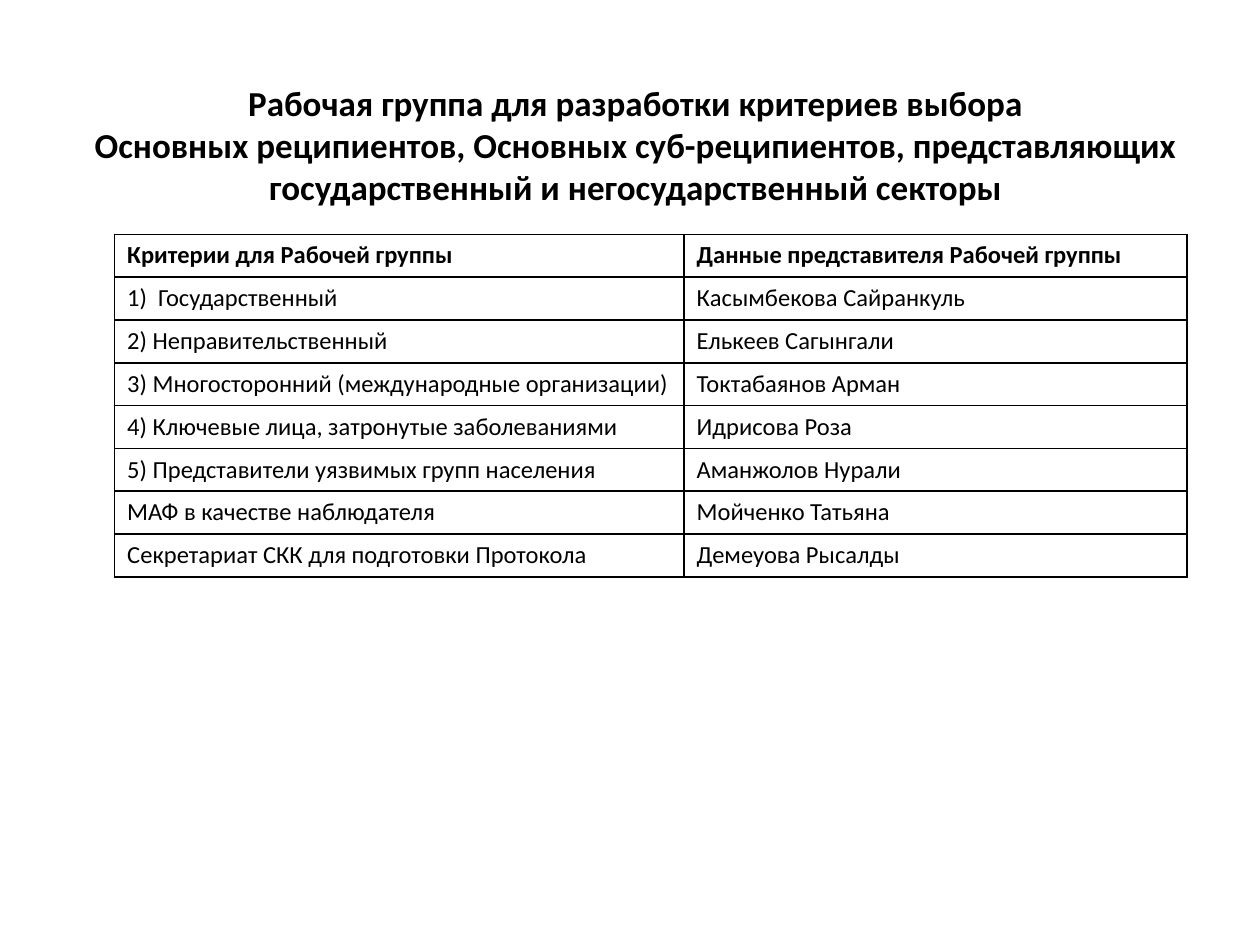
from typing import NamedTuple

import pptx
import pptx.dml.color
import pptx.enum.text
import pptx.oxml
import pptx.oxml.ns
import pptx.util
from pptx.util import Inches

FONT = "Calibri"
BLACK = "000000"
WHITE = "FFFFFF"
TITLE = (
    "Рабочая группа для разработки критериев выбора\v"
    "Основных реципиентов, Основных суб-реципиентов, представляющих "
    "государственный и негосударственный секторы"
)


class Member(NamedTuple):
    criterion: str
    name: str


HEADER = Member("Критерии для Рабочей группы", "Данные представителя Рабочей группы")
MEMBERS = [
    Member("1)  Государственный", "Касымбекова Сайранкуль"),
    Member("2) Неправительственный", "Елькеев Сагынгали"),
    Member("3) Многосторонний (международные организации)", "Токтабаянов Арман"),
    Member("4) Ключевые лица, затронутые заболеваниями", "Идрисова Роза"),
    Member("5) Представители уязвимых групп населения", "Аманжолов Нурали"),
    Member("МАФ в качестве наблюдателя", "Мойченко Татьяна"),
    Member("Секретариат СКК для подготовки Протокола", "Демеуова Рысалды"),
]
COLUMN_WIDTHS = (4.52, 3.99)
ROW_HEIGHT = 0.34


def color(value: str) -> pptx.dml.color.RGBColor:
    return pptx.dml.color.RGBColor.from_string(value)


def format_runs(text_frame, size: float, bold: bool) -> None:
    for paragraph in text_frame.paragraphs:
        for run in paragraph.runs:
            run.font.name = FONT
            run.font.size = pptx.util.Pt(size)
            run.font.bold = bold
            run.font.color.rgb = color(BLACK)


def add_borders(cell, width: float = 1) -> None:
    """Draw all four cell borders; their XML must come before the fill."""
    properties = cell._tc.get_or_add_tcPr()
    for index, side in enumerate(("lnL", "lnR", "lnT", "lnB")):
        border = pptx.oxml.parse_xml(
            f'<a:{side} {pptx.oxml.ns.nsdecls("a")} w="{pptx.util.Pt(width)}">'
            f'<a:solidFill><a:srgbClr val="{BLACK}"/></a:solidFill></a:{side}>'
        )
        properties.insert(index, border)


def format_title(title) -> None:
    title.left, title.top = Inches(0.28), Inches(0.6)
    title.width, title.height = Inches(9.53), Inches(1.1)
    text_frame = title.text_frame
    text_frame.text = TITLE
    text_frame.word_wrap = True
    text_frame.auto_size = pptx.enum.text.MSO_AUTO_SIZE.NONE
    text_frame.vertical_anchor = pptx.enum.text.MSO_ANCHOR.MIDDLE
    text_frame.paragraphs[0].alignment = pptx.enum.text.PP_ALIGN.CENTER
    format_runs(text_frame, 20, True)


def add_member_table(slide, rows: list[Member]) -> None:
    table = slide.shapes.add_table(
        len(rows), len(COLUMN_WIDTHS), Inches(0.91), Inches(1.86),
        Inches(sum(COLUMN_WIDTHS)), Inches(ROW_HEIGHT * len(rows)),
    ).table
    table.horz_banding = False
    for column, width in zip(table.columns, COLUMN_WIDTHS):
        column.width = Inches(width)
    for row_index, member in enumerate(rows):
        table.rows[row_index].height = Inches(ROW_HEIGHT)
        for column_index, text in enumerate(member):
            cell = table.cell(row_index, column_index)
            cell.text_frame.text = text
            format_runs(cell.text_frame, 14, row_index == 0)
            cell.fill.solid()
            cell.fill.fore_color.rgb = color(WHITE)
            add_borders(cell)


def main() -> None:
    presentation = pptx.Presentation()
    presentation.slide_width = Inches(10)
    presentation.slide_height = Inches(7.5)
    title_only = presentation.slide_layouts[5]
    slide = presentation.slides.add_slide(title_only)
    format_title(slide.shapes.title)
    add_member_table(slide, [HEADER, *MEMBERS])
    presentation.save("out.pptx")


if __name__ == "__main__":
    main()
